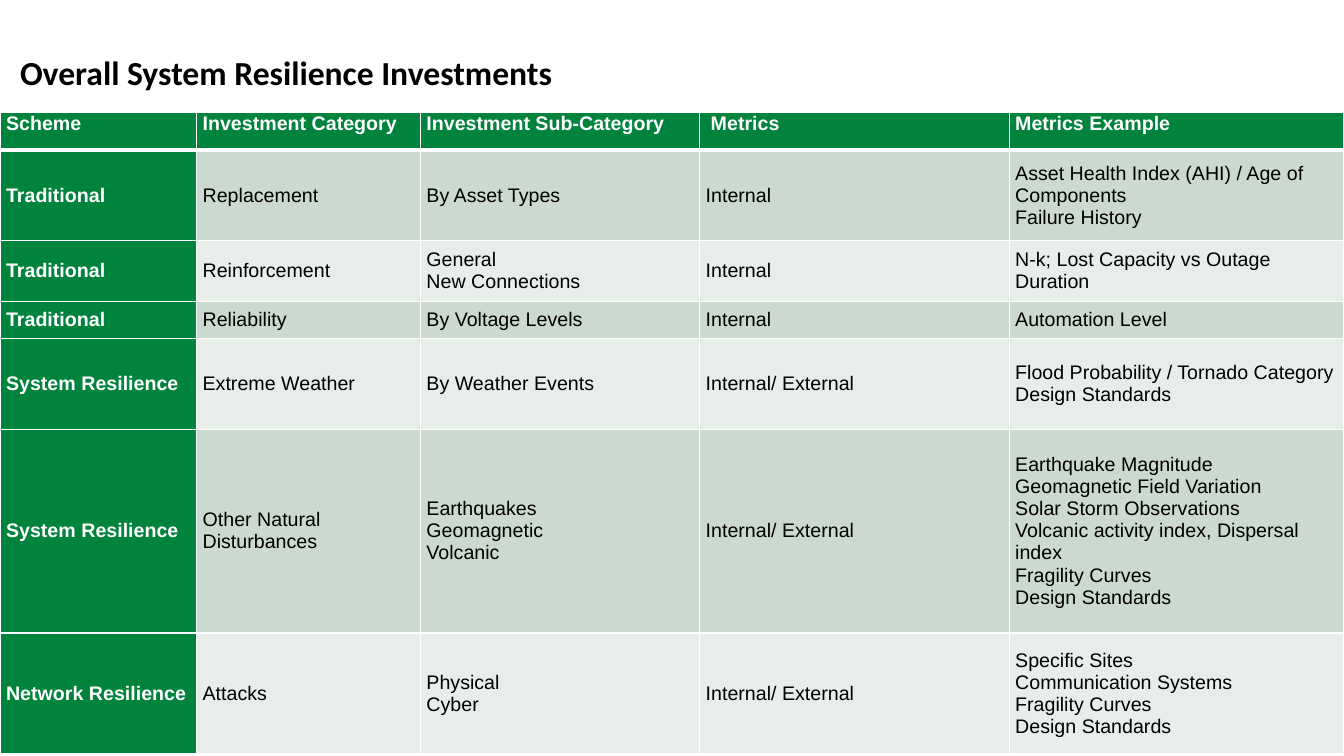
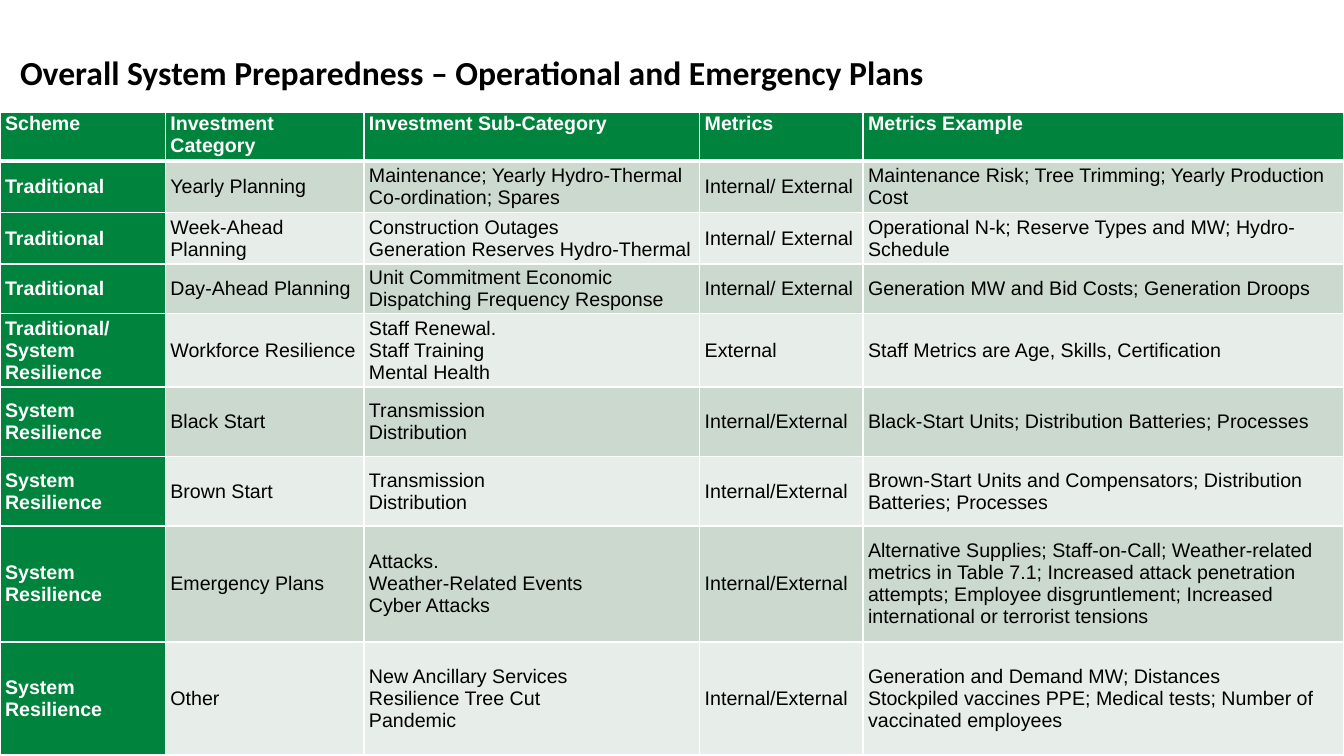
from copy import deepcopy

from lxml.etree import SubElement
from pptx import Presentation
from pptx.dml.color import RGBColor as RGB
from pptx.enum.text import MSO_ANCHOR as ANCHOR
from pptx.oxml.ns import qn
from pptx.util import Inches, Pt

COLORS = {"text": "000000", "white": "FFFFFF", "green": "00833C",
          "odd": "CCD9CE", "even": "E7EDE8"}
W, H = 13.33, 7.5
TITLE_BOX = (0.1, 0.47, 9.69, 0.6)
TABLE_TOP = 1.12

INVESTMENTS = [
    ("Scheme", "Investment Category", "Investment Sub-Category", "Metrics",
     "Metrics Example"),
    ("Traditional", "Replacement", "By Asset Types", "Internal",
     "Asset Health Index (AHI) / Age of Components\nFailure History"),
    ("Traditional", "Reinforcement", "General\nNew Connections", "Internal",
     "N-k; Lost Capacity vs Outage Duration"),
    ("Traditional", "Reliability", "By Voltage Levels", "Internal",
     "Automation Level"),
    ("System Resilience", "Extreme Weather", "By Weather Events",
     "Internal/ External",
     "Flood Probability / Tornado Category\nDesign Standards"),
    ("System Resilience", "Other Natural Disturbances",
     "Earthquakes\nGeomagnetic\nVolcanic", "Internal/ External",
     "Earthquake Magnitude\nGeomagnetic Field Variation\n"
     "Solar Storm Observations\nVolcanic activity index, Dispersal index\n"
     "Fragility Curves\nDesign Standards"),
    ("Network Resilience", "Attacks", "Physical\nCyber", "Internal/ External",
     "Specific Sites\nCommunication Systems\nFragility Curves\n"
     "Design Standards"),
]
PLANS = [
    INVESTMENTS[0],
    ("Traditional", "Yearly Planning",
     "Maintenance; Yearly Hydro-Thermal Co-ordination; Spares",
     "Internal/ External",
     "Maintenance Risk; Tree Trimming; Yearly Production Cost"),
    ("Traditional", "Week-Ahead Planning",
     "Construction Outages\nGeneration Reserves Hydro-Thermal",
     "Internal/ External",
     "Operational N-k; Reserve Types and MW; Hydro-Schedule"),
    ("Traditional", "Day-Ahead Planning",
     "Unit Commitment Economic Dispatching Frequency Response",
     "Internal/ External", "Generation MW and Bid Costs; Generation Droops"),
    ("Traditional/ System Resilience", "Workforce Resilience",
     "Staff Renewal.\nStaff Training\nMental Health", "External",
     "Staff Metrics are Age, Skills, Certification"),
    ("System Resilience", "Black Start", "Transmission\nDistribution",
     "Internal/External",
     "Black-Start Units; Distribution Batteries; Processes"),
    ("System Resilience", "Brown Start", "Transmission\nDistribution",
     "Internal/External",
     "Brown-Start Units and Compensators; Distribution Batteries; Processes"),
    ("System Resilience", "Emergency Plans",
     "Attacks.\nWeather-Related Events\nCyber Attacks", "Internal/External",
     "Alternative Supplies; Staff-on-Call; Weather-related metrics in "
     "Table 7.1; Increased attack penetration attempts; Employee "
     "disgruntlement; Increased international or terrorist tensions"),
    ("System Resilience", "Other",
     "New Ancillary Services\nResilience Tree Cut\nPandemic",
     "Internal/External",
     "Generation and Demand MW; Distances\nStockpiled vaccines PPE; "
     "Medical tests; Number of vaccinated employees"),
]


def write(tf, text, size=14, font="Arial", color="text", bold=False, after=0):
    """Write one paragraph whose newlines become line breaks."""
    tf.word_wrap = True
    p = tf.paragraphs[0]
    p.text = text
    p.space_after = Pt(after)
    for r in p.runs:
        r.font.size, r.font.name, r.font.bold = Pt(size), font, bold
        r.font.color.rgb = RGB.from_string(COLORS[color])
    for br in p._p.findall(qn("a:br")):
        br.append(deepcopy(p.runs[0]._r.rPr))


def add_borders(cell, top=1, bottom=1):
    """Draw white borders round a cell, with widths in points."""
    tcPr = cell._tc.get_or_add_tcPr()
    for side, width in (("L", 1), ("R", 1), ("T", top), ("B", bottom)):
        ln = SubElement(tcPr, qn(f"a:ln{side}"), w=str(Pt(width)))
        fill = SubElement(ln, qn("a:solidFill"))
        SubElement(fill, qn("a:srgbClr"), val=COLORS["white"])


def format_cell(cell, text, row, col, inset):
    """Fill a cell by its place: green header and first column, banded body."""
    head = row == 0
    strong = head or col == 0
    add_borders(cell, top=3 if row == 1 else 1, bottom=3 if head else 1)
    cell.fill.solid()
    band = "green" if strong else "odd" if row % 2 else "even"
    cell.fill.fore_color.rgb = RGB.from_string(COLORS[band])
    cell.margin_left = cell.margin_right = Inches(inset)
    cell.margin_top = cell.margin_bottom = 0
    cell.vertical_anchor = ANCHOR.TOP if head else ANCHOR.MIDDLE
    write(cell.text_frame, text, color="white" if strong else "text",
          bold=strong, after=10)


def add_grid(s, data, cols, rows, inset):
    """Add a full-width table under the title and return it."""
    table = s.shapes.add_table(len(rows), len(cols), 0, Inches(TABLE_TOP),
                               Inches(W), Inches(sum(rows))).table
    for col, width in zip(table.columns, cols):
        col.width = Inches(width)
    for i, (height, texts) in enumerate(zip(rows, data)):
        table.rows[i].height = Inches(height)
        for j, text in enumerate(texts):
            format_cell(table.cell(i, j), text, i, j, inset)
    return table


def add_table_slide(prs, title, data, cols, rows, inset):
    """Add a slide with a title and a table, and return the table."""
    s = prs.slides.add_slide(prs.slide_layouts[6])
    box = s.shapes.add_textbox(*map(Inches, TITLE_BOX))
    write(box.text_frame, title, size=24, font="Calibri", bold=True)
    return add_grid(s, data, cols, rows, inset)


def main():
    """Build and save the presentation."""
    prs = Presentation()
    prs.slide_width, prs.slide_height = Inches(W), Inches(H)
    table = add_table_slide(
        prs, "Overall System Resilience Investments", INVESTMENTS,
        cols=(1.95, 2.22, 2.77, 3.07, 3.32),
        rows=(0.37, 0.9, 0.6, 0.37, 0.9, 2.02, 1.2), inset=0.06)
    table.cell(0, 3).margin_left = Inches(0.11)
    add_table_slide(
        prs, "Overall System Preparedness – Operational and Emergency Plans",
        PLANS, cols=(1.64, 1.97, 3.33, 1.62, 4.77),
        rows=(0.48, 0.51, 0.51, 0.49, 0.73, 0.69, 0.69, 1.15, 1.12),
        inset=0.05)
    prs.save("out.pptx")


if __name__ == "__main__":
    main()
